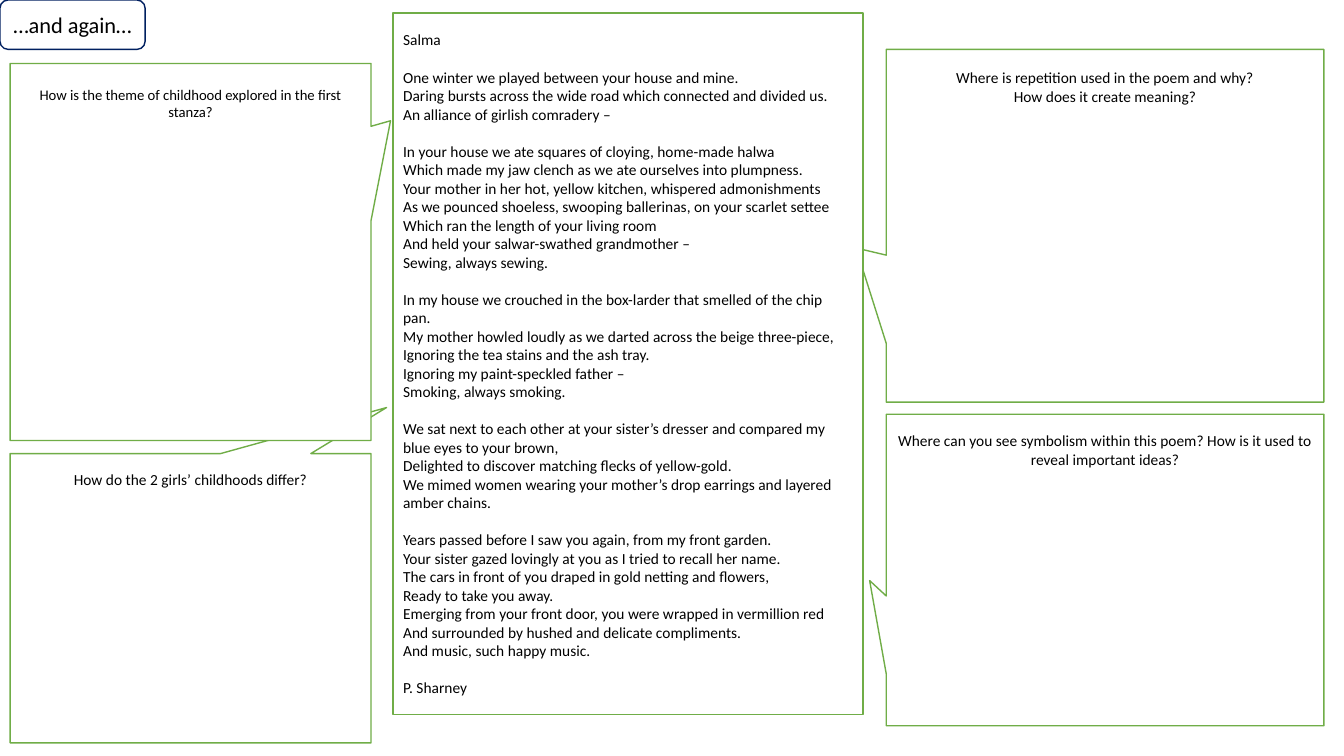
from dataclasses import dataclass

from pptx import Presentation
from pptx.dml.color import RGBColor
from pptx.enum.shapes import MSO_SHAPE as Shape
from pptx.enum.text import MSO_ANCHOR as Anchor, PP_ALIGN as Align
from pptx.util import Inches, Pt


@dataclass(frozen=True)
class Theme:
    font: str = "Calibri"
    white: RGBColor = RGBColor(0xFF, 0xFF, 0xFF)
    black: RGBColor = RGBColor(0, 0, 0)
    navy: RGBColor = RGBColor(0x00, 0x20, 0x60)
    green: RGBColor = RGBColor(0x70, 0xAD, 0x47)
    title_size: float = 16
    body_size: float = 11
    small_size: float = 10.5
    stanza_gap: float = 13.3


theme = Theme()


def add_panel(kind, bounds, line_color):
    """Add a white outlined shape; bounds are left, top, width, height in inches."""
    panel = page.shapes.add_shape(kind, *[Inches(length) for length in bounds])
    panel.shadow.inherit = False
    panel.fill.solid()
    panel.fill.fore_color.rgb = theme.white
    panel.line.color.rgb = line_color
    panel.line.width = Pt(1)
    panel.text_frame.word_wrap = True
    panel.text_frame.vertical_anchor = Anchor.MIDDLE
    return panel


def write_lines(frame, lines, size, align):
    """Write one paragraph per line and return the paragraphs."""
    frame.text = "\n".join(lines)
    for para in frame.paragraphs:
        para.alignment = align
        para.font.name = theme.font
        para.font.size = Pt(size)
        para.font.color.rgb = theme.black
    return frame.paragraphs


deck = Presentation()
deck.slide_width = Inches(13.33)
deck.slide_height = Inches(7.5)
page = deck.slides.add_slide(deck.slide_layouts[6])

title = add_panel(Shape.ROUNDED_RECTANGLE, (0, 0, 1.44, 0.49), theme.navy)
write_lines(title.text_frame, ["…and again…"], theme.title_size, Align.CENTER)

# Bounds, pointer tip (share of width and height from the centre),
# top margin, type size, question
callouts = [
    ((8.79, 0.49, 4.34, 3.5), (-0.569, 0.063), 0.19, theme.body_size,
     ["Where is repetition used in the poem and why?",
      "How does it create meaning?"]),
    ((0.1, 4.5, 3.58, 2.87), (0.543, -0.659), 0.16, theme.body_size,
     ["How do the 2 girls’ childhoods differ?"]),
    ((8.79, 4.11, 4.34, 3.09), (-0.538, 0.034), 0.17, theme.body_size,
     ["Where can you see symbolism within this poem? "
      "How is it used to reveal important ideas?"]),
    ((0.1, 0.63, 3.58, 3.74), (0.554, -0.348), 0.22, theme.small_size,
     ["How is the theme of childhood explored in the first stanza?"]),
]
for bounds, tip, top_margin, size, question in callouts:
    callout = add_panel(Shape.RECTANGULAR_CALLOUT, bounds, theme.green)
    for index, offset in enumerate(tip):
        callout.adjustments[index] = offset
    callout.text_frame.vertical_anchor = Anchor.TOP
    callout.text_frame.margin_top = Inches(top_margin)
    write_lines(callout.text_frame, question, size, Align.CENTER)

stanzas = [
    ["Salma"],
    ["One winter we played between your house and mine.",
     "Daring bursts across the wide road which connected and divided us.",
     "An alliance of girlish comradery –"],
    ["In your house we ate squares of cloying, home-made halwa",
     "Which made my jaw clench as we ate ourselves into plumpness.",
     "Your mother in her hot, yellow kitchen, whispered admonishments",
     "As we pounced shoeless, swooping ballerinas, on your scarlet settee",
     "Which ran the length of your living room",
     "And held your salwar-swathed grandmother –",
     "Sewing, always sewing."],
    ["In my house we crouched in the box-larder that smelled of the chip pan.",
     "My mother howled loudly as we darted across the beige three-piece,",
     "Ignoring the tea stains and the ash tray.",
     "Ignoring my paint-speckled father –",
     "Smoking, always smoking."],
    ["We sat next to each other at your sister’s dresser and compared my "
     "blue eyes to your brown,",
     "Delighted to discover matching flecks of yellow-gold.",
     "We mimed women wearing your mother’s drop earrings and layered "
     "amber chains."],
    ["Years passed before I saw you again, from my front garden.",
     "Your sister gazed lovingly at you as I tried to recall her name.",
     "The cars in front of you draped in gold netting and flowers,",
     "Ready to take you away.",
     "Emerging from your front door, you were wrapped in vermillion red",
     "And surrounded by hushed and delicate compliments.",
     "And music, such happy music."],
    ["P. Sharney"],
]
poem = add_panel(Shape.RECTANGLE, (3.9, 0.13, 4.66, 6.96), theme.green)
verses = [verse for stanza in stanzas for verse in stanza]
paras = write_lines(poem.text_frame, verses, theme.body_size, Align.LEFT)
first_verse = 0
for stanza in stanzas[:-1]:
    first_verse += len(stanza)
    paras[first_verse].space_before = Pt(theme.stanza_gap)

deck.save("out.pptx")
